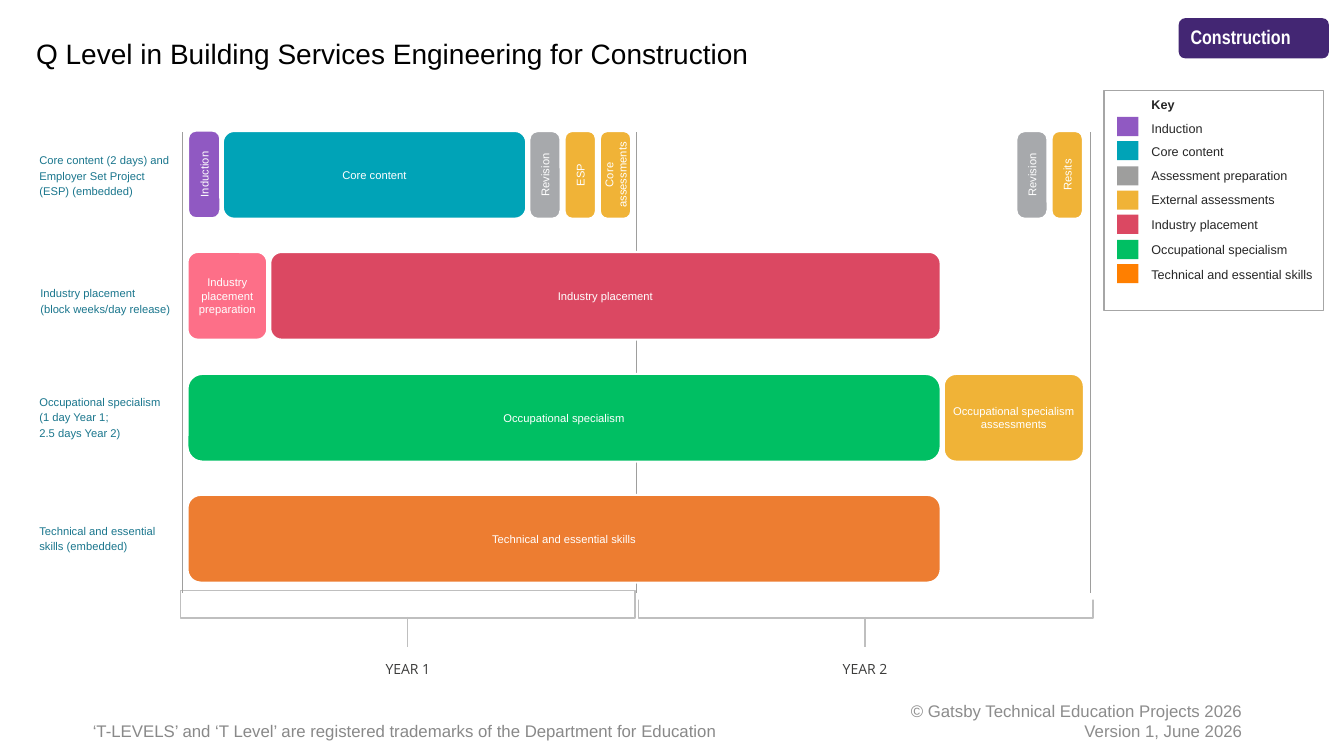
from lxml.etree import SubElement
from pptx import Presentation
from pptx.dml.color import RGBColor
from pptx.enum.shapes import MSO_CONNECTOR as Conn, MSO_SHAPE as Shape
from pptx.enum.text import MSO_ANCHOR as Anchor, PP_ALIGN as Align
from pptx.oxml.ns import qn
from pptx.util import Pt

PX = 9144  # 100 px to the inch
WHITE, RULE, FRAME, TEAL = "FFFFFF", "9E9E9D", "BFBFBF", "1A768D"
PURPLE, CYAN, GREY, AMBER = "9059C2", "00A3B7", "A7A9AC", "F0B337"
RED, PINK, GREEN, ORANGE = "DB4862", "FD6F88", "00BF63", "ED7D31"

TITLE = "Q Level in Building Services Engineering for Construction"
ROUTE = "Construction"
MARK = "‘T-LEVELS’ and ‘T Level’ are registered trademarks of the Department for Education"
RIGHTS = ["© Gatsby Technical Education Projects 2026", "Version 1, June 2026"]

# name, left of bracket, left of stem, label box left and width
YEARS = [("YEAR 1", 179, 404, 374, 61), ("YEAR 2", 633, 858, 825, 66)]
EDGES = [631, 181, 1082]

# label lines, label left, top, width, height
LABELS = [
    (["Core content (2 days) and Employer Set Project (ESP) (embedded)"], 39, 150, 130, 47),
    (["Industry placement", "(block weeks/day release)"], 40, 282, 136, 31),
    (["Occupational specialism", "(1 day Year 1;\v2.5 days Year 2)"], 39, 390, 130, 47),
    (["Technical and essential skills (embedded)"], 39, 518, 130, 31),
]

# top of row, then bars: name, left, width, colour, corner
BAR_H, SLIM = 87, 40
ROWS = [
    (130, [("Induction", 186, 32, PURPLE, 0.25), ("Core content", 221, 301, CYAN, 0.13),
           ("Revision", 525, 31, GREY, 0.27), ("ESP", 560, 31, AMBER, 0.24),
           ("Core assessments", 595, 31, AMBER, 0.24),
           ("Revision", 1008, 31, GREY, 0.27), ("Resits", 1043, 31, AMBER, 0.24)]),
    (250, [("Industry placement preparation", 186, 79, PINK, 0.13),
           ("Industry placement", 268, 665, RED, 0.13)]),
    (371, [("Occupational specialism", 186, 747, GREEN, 0.17),
           ("Occupational specialism assessments", 936, 139, AMBER, 0.14)]),
    (491, [("Technical and essential skills", 186, 747, ORANGE, 0.15)]),
]

KEY = [("Induction", PURPLE), ("Core content", CYAN), ("Assessment preparation", RULE),
       ("External assessments", AMBER), ("Industry placement", RED),
       ("Occupational specialism", GREEN), ("Technical and essential skills", "FF7F00")]

prs = Presentation()
prs.slide_width, prs.slide_height = 1333 * PX, 750 * PX
slide = prs.slides.add_slide(prs.slide_layouts[6])
shapes = slide.shapes


def rgb(code):
    return RGBColor.from_string(code)


def write(shape, lines, size, color, font="Arial", align=Align.LEFT, bold=False,
          space=None, inset=(10, 5, 10, 5), anchor=Anchor.TOP):
    frame = shape.text_frame
    frame.word_wrap = True
    frame.vertical_anchor = anchor
    (frame.margin_left, frame.margin_top,
     frame.margin_right, frame.margin_bottom) = [n * PX for n in inset]
    for i, line in enumerate(lines):
        para = frame.add_paragraph() if i else frame.paragraphs[0]
        para.text = line
        para.alignment = align
        if space:
            para.line_spacing = space
        para.font.name, para.font.size = font, Pt(size)
        para.font.bold = bold
        para.font.color.rgb = rgb(color)
    return frame.paragraphs


def label(box, lines, size, color, **style):
    return write(shapes.add_textbox(*[n * PX for n in box]), lines, size, color, **style)


def block(kind, box, fill=None, line=None, width=1):
    shape = shapes.add_shape(kind, *[n * PX for n in box])
    shape.shadow.inherit = False
    if fill:
        shape.fill.solid()
        shape.fill.fore_color.rgb = rgb(fill)
    else:
        shape.fill.background()
    if line:
        shape.line.color.rgb = rgb(line)
        shape.line.width = Pt(width)
    else:
        shape.line.fill.background()
    return shape


def post(x, top, end, color, width):
    """Draw an upright line."""
    line = shapes.add_connector(Conn.STRAIGHT, x * PX, top * PX, x * PX, end * PX)
    line.line.color.rgb = rgb(color)
    line.line.width = Pt(width)
    SubElement(line._element.spPr, qn("a:effectLst"))


def bar(name, left, top, width, color, corner):
    """Draw a rounded bar; a slim one is turned so its text reads upward."""
    slim = width < SLIM
    if slim:
        shift = (BAR_H - width) // 2
        box = (left - shift, top + shift, BAR_H, width)
    else:
        box = (left, top, width, BAR_H)
    shape = block(Shape.ROUNDED_RECTANGLE, box, color, WHITE, 1.5)
    shape.adjustments[0] = corner
    shape.rotation = 270 if slim else 0
    write(shape, [name], 8, WHITE, align=Align.CENTER, inset=(4, 5, 4, 5), anchor=Anchor.MIDDLE)


FLUSH = (0, 0, 0, 0)

for name, left, stem, text_x, text_w in YEARS:
    block(Shape.RECTANGLE, (left, 586, 451, 27), line=FRAME)
    post(stem, 612, 642, FRAME, 1)
    label((text_x, 655, text_w, 14), [name], 10, "3C3C3B", font="Open Sans",
          align=Align.CENTER, space=1.02, inset=FLUSH)
block(Shape.RECTANGLE, (631, 578, 457, 17), WHITE)
for x in EDGES:
    post(x, 131, 588, RULE, 0.75)

pill = block(Shape.ROUNDED_RECTANGLE, (1169, 18, 149, 40), "432673")
write(pill, [ROUTE], 14, WHITE, font="Arial Narrow", bold=True)
label((883, 695, 359, 40), RIGHTS, 12, "8C8C8C", align=Align.RIGHT, anchor=Anchor.MIDDLE)
label((92, 715, 681, 20), [MARK], 12, "898989", inset=FLUSH)
label((26, 31, 987, 44), [TITLE], 20, "000000")

for lines, *box in LABELS:
    label(box, lines, 8, TEAL, space=1.16, inset=FLUSH)
for top, bars in ROWS:
    for name, left, width, color, corner in bars:
        bar(name, left, top, width, color, corner)

panel = block(Shape.RECTANGLE, (1095, 90, 218, 218), line="A6A6A6")
head, *items = write(panel, ["Key"] + [name for name, _ in KEY], 9, "262626",
                     space=1.08, inset=(47, 5, 10, 5))
head.font.bold = True
for i, (item, (_, color)) in enumerate(zip(items, KEY)):
    item.space_before = Pt(6)
    if i < 3:
        item.line_spacing = 1.0
    block(Shape.RECTANGLE, (1108, 116 + round(i * 146 / 6), 21, 19), color)

prs.save("out.pptx")
